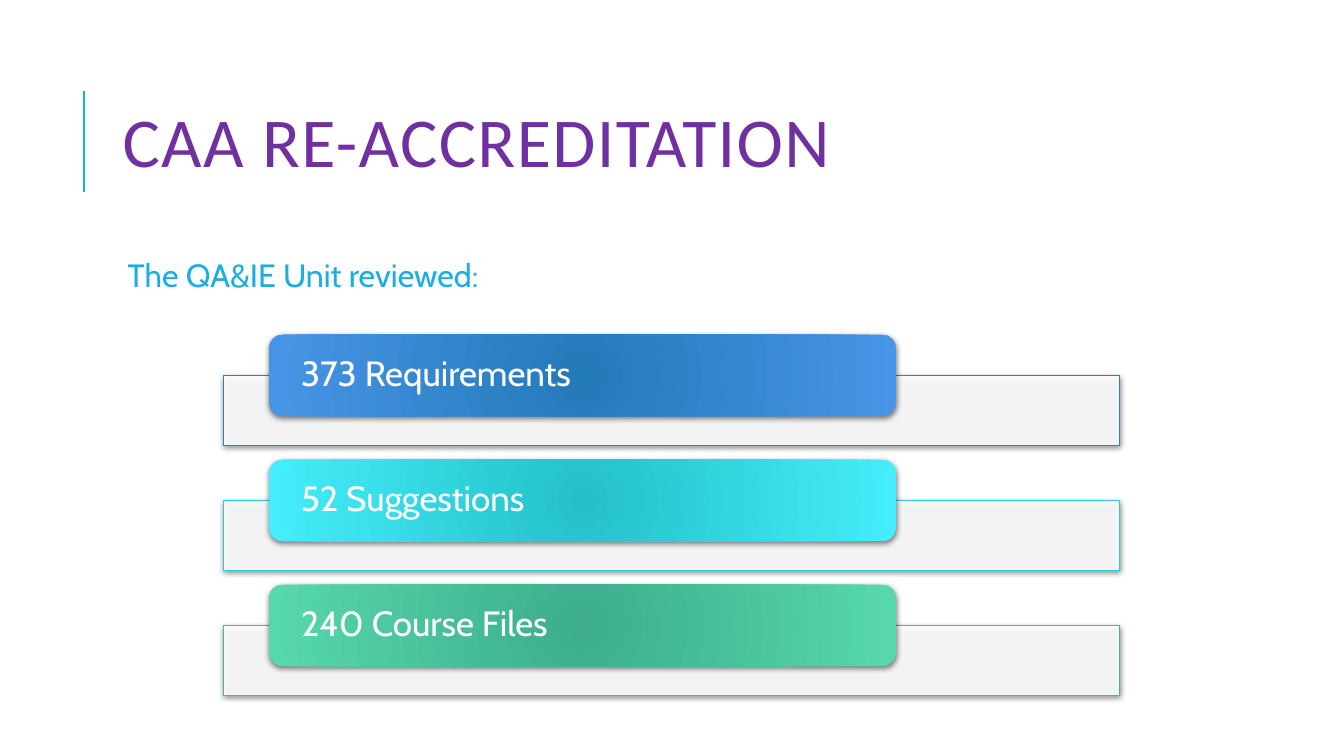
"""Build the re-accreditation slide with its three review counts."""
from lxml import etree
from pptx import Presentation, util as u
from pptx.dml.color import RGBColor
from pptx.enum import shapes, text
from pptx.oxml import ns

TITLE = "CAA RE-ACCREDITATION"
LEAD = "The QA&IE Unit reviewed:"
WHITE = RGBColor(0xFF, 0xFF, 0xFF)
PURPLE = RGBColor(0x70, 0x30, 0xA0)
SKY = RGBColor(0x1C, 0xAD, 0xE4)
ROWS = [
    ("373 Requirements", RGBColor(0x26, 0x83, 0xC6), RGBColor(0x23, 0x7A, 0xB8), RGBColor(0x48, 0x95, 0xE7)),
    ("52 Suggestions", RGBColor(0x27, 0xCE, 0xD7), RGBColor(0x24, 0xC0, 0xC8), RGBColor(0x44, 0xEE, 0xFA)),
    ("240 Course Files", RGBColor(0x42, 0xBA, 0x97), RGBColor(0x3D, 0xAD, 0x8D), RGBColor(0x57, 0xD8, 0xAC)),
]
TOP, STEP, DROP = 8.43, 3.15, 1.04


def sub(node, tag, **attrs):
    return etree.SubElement(node, ns.qn(tag), attrs)


def write(shape, words, size, color, font="Cabin", inset=0.38, pad=0.0, lead=0.9, track=0):
    frame = shape.text_frame
    frame.word_wrap = True
    frame.vertical_anchor = text.MSO_ANCHOR.MIDDLE
    frame.margin_left = frame.margin_right = u.Cm(inset)
    frame.margin_top = frame.margin_bottom = u.Cm(pad)
    para = frame.paragraphs[0]
    para.alignment = text.PP_ALIGN.LEFT
    para.line_spacing = lead
    run = para.add_run()
    run.text = words
    run.font.name, run.font.size = font, u.Pt(size)
    run.font.color.rgb = color
    if track:
        run.font._element.set("spc", str(track * 100))


def label(slide, box, words, size, color, **style):
    write(slide.shapes.add_textbox(*map(u.Cm, box)), words, size, color, **style)


def block(slide, kind, box):
    shape = slide.shapes.add_shape(kind, *map(u.Cm, box))
    shape.shadow.inherit = False
    effect = shape._element.spPr.find(ns.qn("a:effectLst"))
    shade = sub(effect, "a:outerShdw", blurRad=str(u.Pt(4)), dist=str(u.Pt(1)),
                dir="5400000", algn="ctr", rotWithShape="0")
    sub(sub(shade, "a:srgbClr", val="000000"), "a:alpha", val="50000")
    return shape


def track(slide, top, color):
    shape = block(slide, shapes.MSO_SHAPE.RECTANGLE, (5.64, top, 22.58, 1.75))
    shape.fill.solid()
    shape.fill.fore_color.rgb = WHITE
    tint = shape._element.spPr.find(ns.qn("a:solidFill"))[0]
    sub(tint, "a:alpha", val="90000")
    shape.line.color.rgb = color
    shape.line.width = u.Pt(0.75)


def bar(slide, top, words, inner, outer):
    shape = block(slide, shapes.MSO_SHAPE.ROUNDED_RECTANGLE, (6.78, top, 15.8, 2.06))
    shape.fill.gradient()
    for stop, color in zip(shape.fill.gradient_stops, (inner, outer)):
        stop.color.rgb = color
    grad = shape._element.spPr.find(ns.qn("a:gradFill"))
    grad.remove(grad.find(ns.qn("a:lin")))
    ring = sub(grad, "a:path", path="circle")
    sub(ring, "a:fillToRect", **dict.fromkeys("ltrb", "100000"))
    shape.line.fill.background()
    write(shape, words, 25, WHITE, inset=0.71)


def main():
    deck = Presentation()
    deck.slide_width, deck.slide_height = u.Cm(33.87), u.Cm(19.05)
    slide = deck.slides.add_slide(deck.slide_layouts[6])
    rule = slide.shapes.add_connector(shapes.MSO_CONNECTOR.STRAIGHT,
                                      *map(u.Cm, (2.12, 4.83, 2.12, 2.29)))
    rule.line.color.rgb = SKY
    rule.line.width = u.Pt(1.5)
    sub(rule._element.spPr, "a:effectLst")
    label(slide, (2.84, 1.63, 27, 4.17), TITLE, 50, PURPLE,
          font="Calibri", inset=0.25, pad=0.13, lead=0.8, track=1)
    label(slide, (2.84, 6.05, 27, 1.85), LEAD, 23, SKY, pad=0.13)
    for row, (words, edge, inner, outer) in enumerate(ROWS):
        top = TOP + row * STEP
        track(slide, top + DROP, edge)
        bar(slide, top, words, inner, outer)
    deck.save("out.pptx")


if __name__ == "__main__":
    main()
